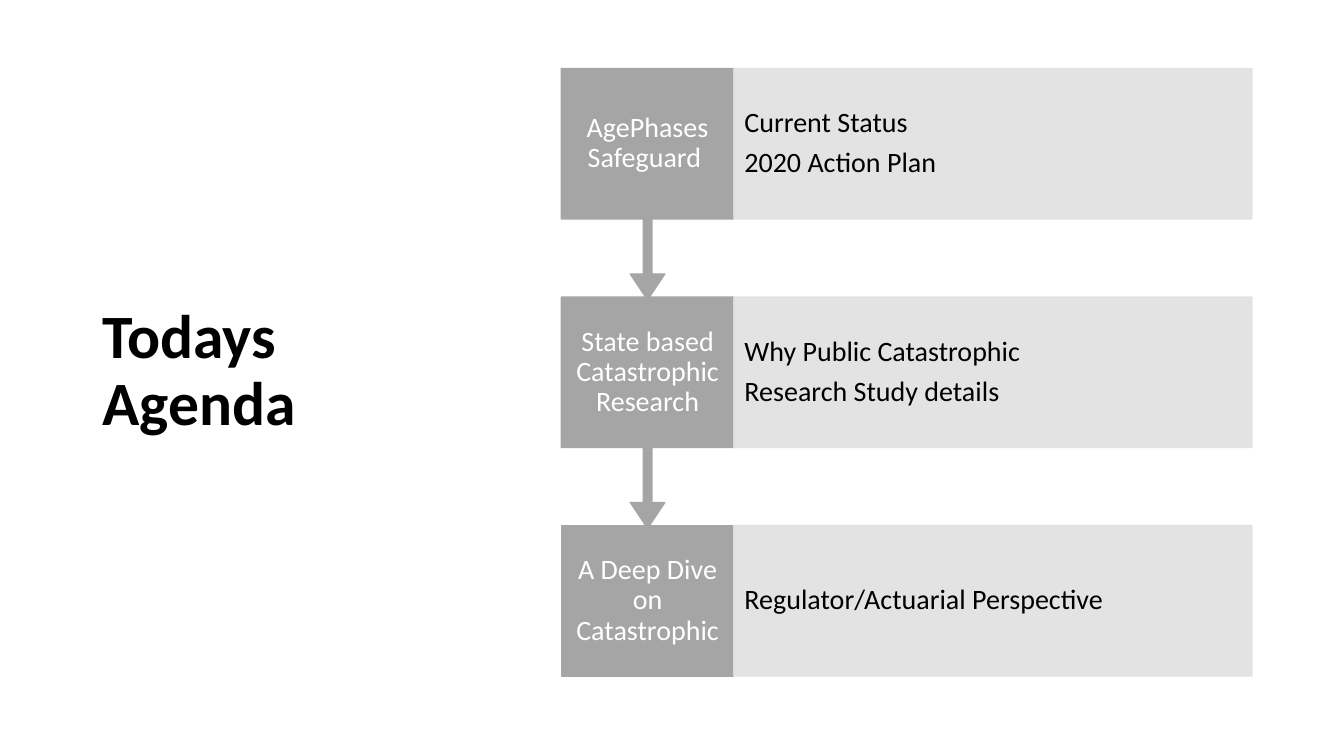
from dataclasses import dataclass

from lxml.etree import SubElement
from pptx import Presentation
from pptx.dml.color import RGBColor
from pptx.enum.shapes import MSO_SHAPE
from pptx.enum.text import MSO_ANCHOR, PP_ALIGN
from pptx.oxml.ns import qn
from pptx.shapes.autoshape import Shape
from pptx.slide import Slide
from pptx.text.text import TextFrame
from pptx.util import Pt

BLACK = RGBColor(0x00, 0x00, 0x00)
WHITE = RGBColor(0xFF, 0xFF, 0xFF)
TOPIC_GRAY = RGBColor(0xA5, 0xA5, 0xA5)
DETAIL_GRAY = RGBColor(0xE1, 0xE1, 0xE1)

FONT = "Calibri"
FIRST_TOP = 49
ROW_PITCH = 163.2
ROW_HEIGHT = 107.4
CALLOUT_HEIGHT = 165.2
TOPIC_LEFT = 401
TOPIC_WIDTH = 123.2
DETAIL_LEFT = TOPIC_LEFT + TOPIC_WIDTH
DETAIL_WIDTH = 370
CALLOUT_ADJUSTMENTS = (0.05, 0.1, 0.15, 0.65)


@dataclass(frozen=True)
class AgendaItem:
    topic: str
    details: str


AGENDA = [
    AgendaItem("AgePhases Safeguard ", "Current Status\n2020 Action Plan"),
    AgendaItem("State based Catastrophic Research",
               "Why Public Catastrophic\nResearch Study details"),
    AgendaItem("A Deep Dive on Catastrophic ", "Regulator/Actuarial Perspective"),
]


def write_text(frame: TextFrame, text: str, size: float, color: RGBColor,
               align: PP_ALIGN = PP_ALIGN.LEFT, space_after: float = 0,
               bold: bool = False) -> None:
    frame.word_wrap = True
    frame.vertical_anchor = MSO_ANCHOR.MIDDLE
    frame.text = text
    for paragraph in frame.paragraphs:
        paragraph.alignment = align
        paragraph.line_spacing = 0.9
        paragraph.space_after = Pt(space_after)
        for run in paragraph.runs:
            run.font.name = FONT
            run.font.size = Pt(size)
            run.font.bold = bold
            run.font.color.rgb = color


def set_insets(frame: TextFrame, side: float, end: float) -> None:
    frame.margin_left = frame.margin_right = Pt(side)
    frame.margin_top = frame.margin_bottom = Pt(end)


def add_block(slide: Slide, preset: MSO_SHAPE, left: float, top: float,
              width: float, height: float, color: RGBColor) -> Shape:
    block = slide.shapes.add_shape(preset, Pt(left), Pt(top), Pt(width), Pt(height))
    block.shadow.inherit = False
    block.fill.solid()
    block.fill.fore_color.rgb = color
    block.line.color.rgb = color
    block.line.width = Pt(1)
    return block


def set_opacity(block: Shape, percent: int) -> None:
    """Apply the opacity to both the fill and the outline."""
    for color in block.fill._xPr.iter(qn("a:srgbClr")):
        SubElement(color, qn("a:alpha")).set("val", str(percent * 1000))


def add_agenda_row(slide: Slide, item: AgendaItem, top: float, leads_on: bool) -> None:
    """Draw a topic with its details; leads_on adds the arrow to the next row."""
    preset = MSO_SHAPE.DOWN_ARROW_CALLOUT if leads_on else MSO_SHAPE.RECTANGLE
    height = CALLOUT_HEIGHT if leads_on else ROW_HEIGHT
    topic = add_block(slide, preset, TOPIC_LEFT, top, TOPIC_WIDTH, height, TOPIC_GRAY)
    if leads_on:
        for index, value in enumerate(CALLOUT_ADJUSTMENTS):
            topic.adjustments[index] = value
    set_insets(topic.text_frame, 8.7, 11.5)
    write_text(topic.text_frame, item.topic, 20, WHITE, PP_ALIGN.CENTER, space_after=7)

    details = add_block(slide, MSO_SHAPE.RECTANGLE, DETAIL_LEFT, top,
                        DETAIL_WIDTH, ROW_HEIGHT, DETAIL_GRAY)
    set_opacity(details, 90)
    set_insets(details.text_frame, 7.5, 20)
    write_text(details.text_frame, item.details, 20, BLACK, space_after=7)


def main() -> None:
    presentation = Presentation()
    presentation.slide_width = Pt(960)
    presentation.slide_height = Pt(540)
    slide = presentation.slides.add_slide(presentation.slide_layouts[6])

    title = slide.shapes.add_textbox(Pt(66), Pt(FIRST_TOP), Pt(266), Pt(433.5))
    write_text(title.text_frame, "Todays Agenda", 44, BLACK, bold=True)

    last = len(AGENDA) - 1
    # Last row first, so that each arrow tip lies over the row below it.
    for row, item in reversed(list(enumerate(AGENDA))):
        add_agenda_row(slide, item, FIRST_TOP + row * ROW_PITCH, leads_on=row < last)

    presentation.save("out.pptx")


if __name__ == "__main__":
    main()
